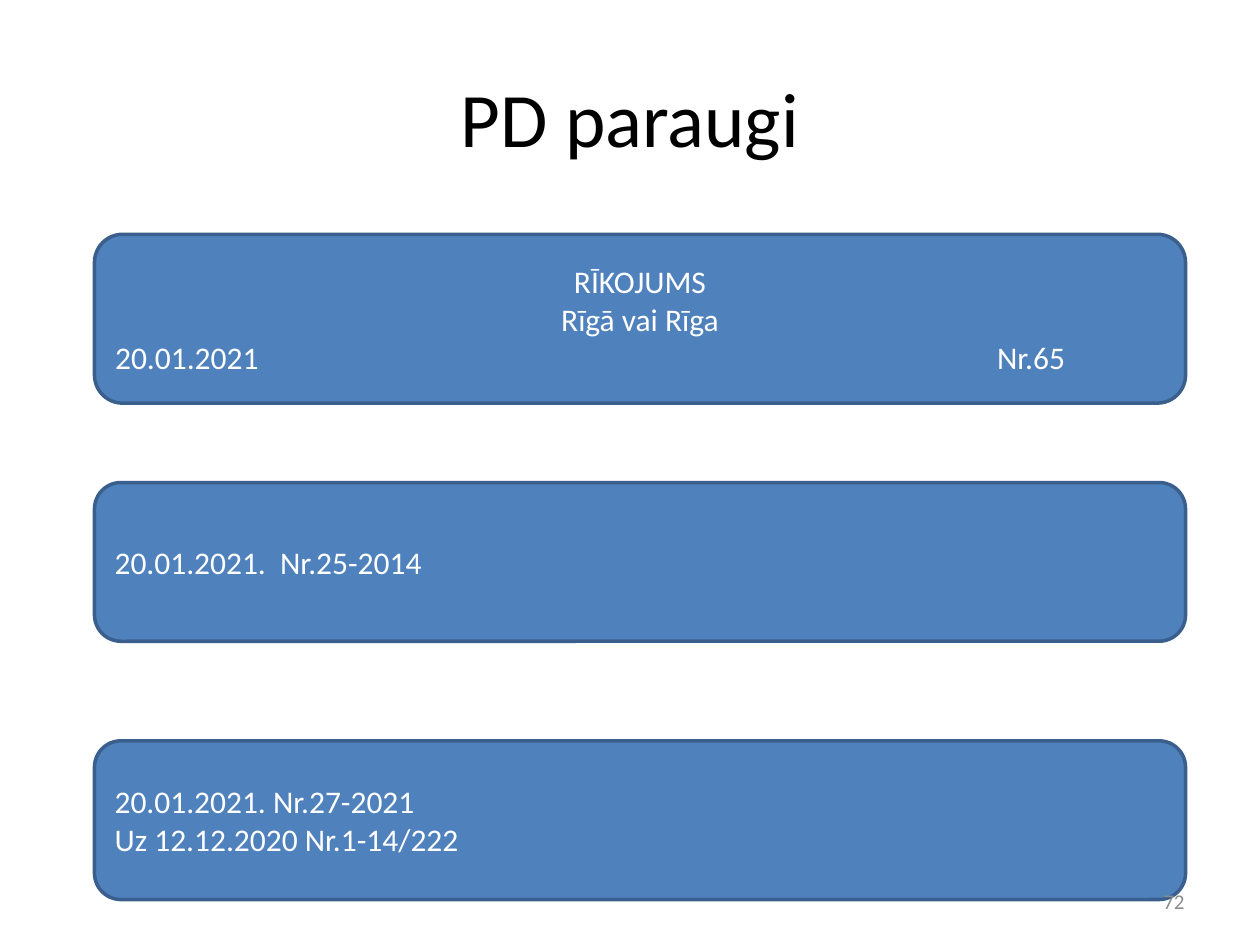
from lxml import etree
from pptx import Presentation
from pptx import util as u
from pptx.dml.color import RGBColor
from pptx.enum import shapes, text
from pptx.oxml import ns

BLACK = RGBColor(0x00, 0x00, 0x00)
WHITE = RGBColor(0xFF, 0xFF, 0xFF)
GREY = RGBColor(0x8C, 0x8C, 0x8C)
BLUE = RGBColor(0x4F, 0x81, 0xBD)
EDGE = RGBColor(0x3A, 0x5F, 0x8C)

WIDE, HIGH = 10, 7.5
LEFT, SPAN = 0.075, 0.866
MID = text.PP_ALIGN.CENTER
START = text.PP_ALIGN.LEFT
END = text.PP_ALIGN.RIGHT
BOTH = text.PP_ALIGN.JUSTIFY

CARDS = [
    (1.86, 1.34, [("RĪKOJUMS", MID), ("Rīgā vai Rīga", MID),
                  ("20.01.2021\tNr.65", BOTH)]),
    (3.83, 1.26, [("20.01.2021.  Nr.25-2014", START)]),
    (5.88, 1.26, [("20.01.2021. Nr.27-2021", START),
                  ("Uz 12.12.2020 Nr.1-14/222", START)]),
]


def place(x, y, w, h):
    return (u.Inches(x * WIDE), u.Inches(y * HIGH),
            u.Inches(w * WIDE), u.Inches(h * HIGH))


def style(item, form):
    for key, value in form.items():
        setattr(item, key, value)


def add_tab(para, inch):
    stops = etree.SubElement(para._p.get_or_add_pPr(), ns.qn("a:tabLst"))
    etree.SubElement(stops, ns.qn("a:tab"), pos=str(u.Inches(inch)), algn="l")


def write(shape, lines, size, color):
    frame = shape.text_frame
    style(frame, {"word_wrap": True,
                  "vertical_anchor": text.MSO_ANCHOR.MIDDLE})
    for i, (words, align) in enumerate(lines):
        para = frame.add_paragraph() if i else frame.paragraphs[0]
        para.alignment = align
        if "\t" in words:
            add_tab(para, 7)
        run = para.add_run()
        run.text = words
        style(run.font, {"name": "Calibri", "size": u.Pt(size)})
        run.font.color.rgb = color


def add_text(slide, box, line, size, color):
    write(slide.shapes.add_textbox(*place(*box)), [line], size, color)


def add_card(slide, top, tall, lines):
    card = slide.shapes.add_shape(
        shapes.MSO_SHAPE.ROUNDED_RECTANGLE,
        *place(LEFT, top / HIGH, SPAN, tall / HIGH))
    card.shadow.inherit = False
    card.fill.solid()
    card.fill.fore_color.rgb = BLUE
    card.line.color.rgb = EDGE
    card.line.width = u.Pt(2)
    write(card, lines, 18, WHITE)


def main():
    deck = Presentation()
    style(deck, {"slide_width": u.Inches(WIDE),
                 "slide_height": u.Inches(HIGH)})
    slide = deck.slides.add_slide(deck.slide_layouts[6])
    add_text(slide, (0.05, 0.04, 0.9, 1 / 6), ("PD paraugi", MID), 44, BLACK)
    for top, tall, lines in CARDS:
        add_card(slide, top, tall, lines)
    add_text(slide, (0.717, 6.95 / HIGH, 0.233, 0.4 / HIGH),
             ("72", END), 12, GREY)
    deck.save("out.pptx")


if __name__ == "__main__":
    main()
